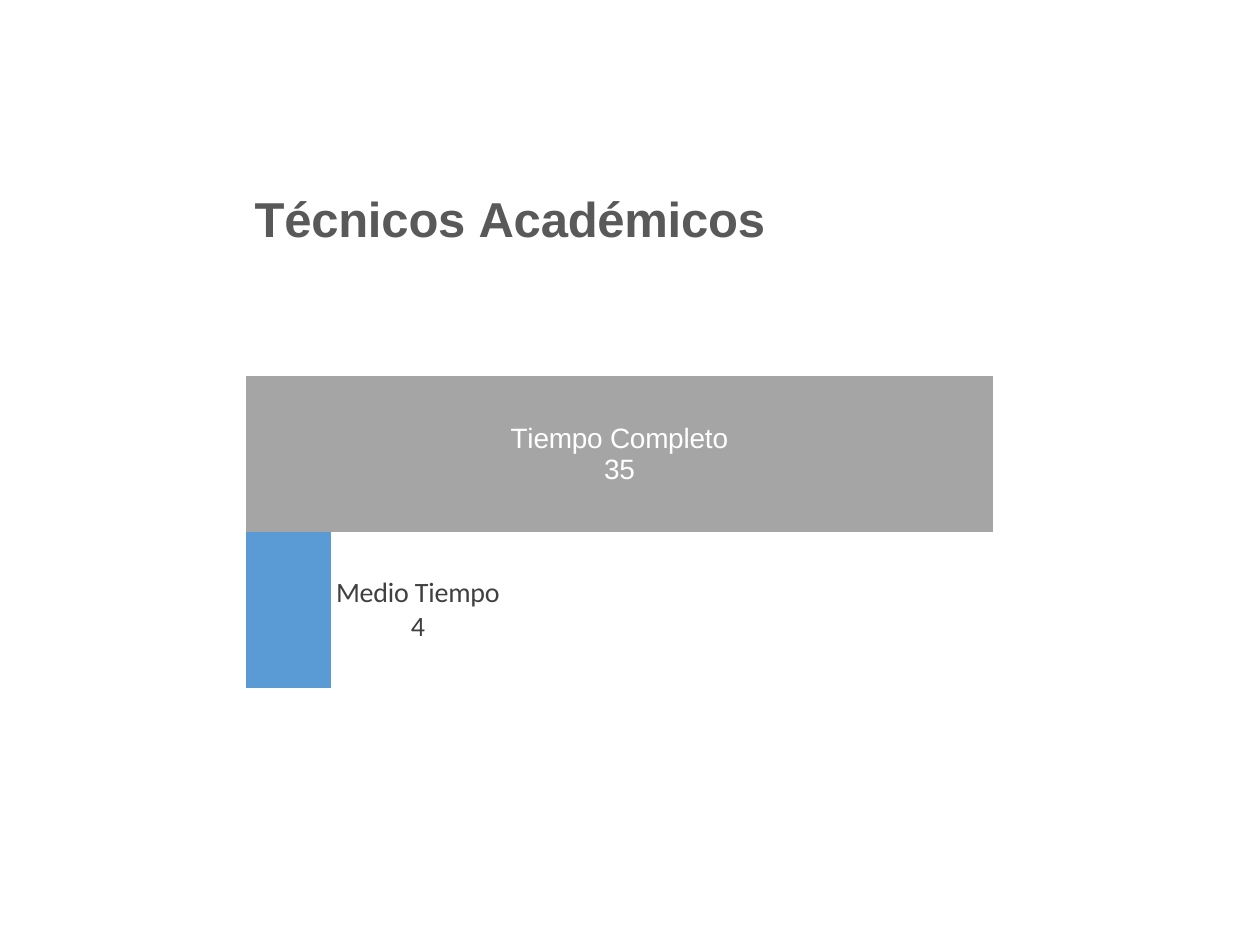
"""Build a slide with a bar chart of academic technicians by working time."""
from pptx import Presentation
from pptx.chart.data import CategoryChartData
from pptx.dml.color import RGBColor
from pptx.enum.chart import XL_CHART_TYPE, XL_LABEL_POSITION
from pptx.oxml import parse_xml
from pptx.oxml.ns import nsdecls, qn
from pptx.util import Pt

COLORS = {
    "title": "595959",
    "half_time": "5B9BD5",
    "full_time": "A5A5A5",
    "dark_label": "404040",
    "light_label": "FFFFFF",
}


def set_layout(element, position, **fractions):
    for layout in element.findall(qn("c:layout")):
        element.remove(layout)
    target = '<c:layoutTarget val="inner"/>' if "w" in fractions else ""
    modes = "".join(f'<c:{key}Mode val="edge"/>' for key in "xy")
    values = "".join(f'<c:{key} val="{value}"/>' for key, value in fractions.items())
    element.insert(position, parse_xml(
        f'<c:layout {nsdecls("c")}><c:manualLayout>{target}{modes}{values}'
        "</c:manualLayout></c:layout>"))


def style_font(font, name, size, color, bold=False):
    font.name = name
    font.size = Pt(size)
    font.bold = bold
    font.color.rgb = RGBColor.from_string(COLORS[color])


presentation = Presentation()
presentation.slide_width = Pt(720)
presentation.slide_height = Pt(540)
slide = presentation.slides.add_slide(presentation.slide_layouts[6])

chart_data = CategoryChartData()
chart_data.categories = ["1"]
chart_data.add_series("Medio Tiempo", [4])
chart_data.add_series("Tiempo Completo", [35])
chart = slide.shapes.add_chart(
    XL_CHART_TYPE.BAR_CLUSTERED, Pt(130.3), Pt(91.4), Pt(508.3), Pt(376.6), chart_data
).chart
chart.has_legend = False
chart.font.name = "Calibri"
chart.font.size = Pt(10)

title = chart.chart_title
title.text_frame.text = "Técnicos Académicos"
style_font(title.text_frame.paragraphs[0].runs[0].font, "Arial", 28, "title", True)
set_layout(title._element, 1, x=0.02, y=0.03)
set_layout(chart._chartSpace.chart.plotArea, 0, x=0.02, y=0.15, w=0.96, h=0.83)

chart.value_axis.minimum_scale = 0
chart.value_axis.maximum_scale = 40
chart.value_axis.has_major_gridlines = False
for axis in (chart.category_axis, chart.value_axis):
    axis.visible = False

plot = chart.plots[0]
plot.gap_width = 150
plot.overlap = 0
plot.vary_by_categories = False
series_styles = [
    ("half_time", "dark_label", "Calibri", XL_LABEL_POSITION.OUTSIDE_END),
    ("full_time", "light_label", "Arial", XL_LABEL_POSITION.CENTER),
]
for series, (fill_color, label_color, font_name, position) in zip(plot.series, series_styles):
    series.format.fill.solid()
    series.format.fill.fore_color.rgb = RGBColor.from_string(COLORS[fill_color])
    labels = series.data_labels
    labels.show_series_name = True
    labels.show_value = True
    labels.position = position
    style_font(labels.font, font_name, 16, label_color)
    separator = parse_xml(f'<c:separator {nsdecls("c")}>\n</c:separator>')
    labels._element.find(qn("c:showBubbleSize")).addnext(separator)

presentation.save("out.pptx")
